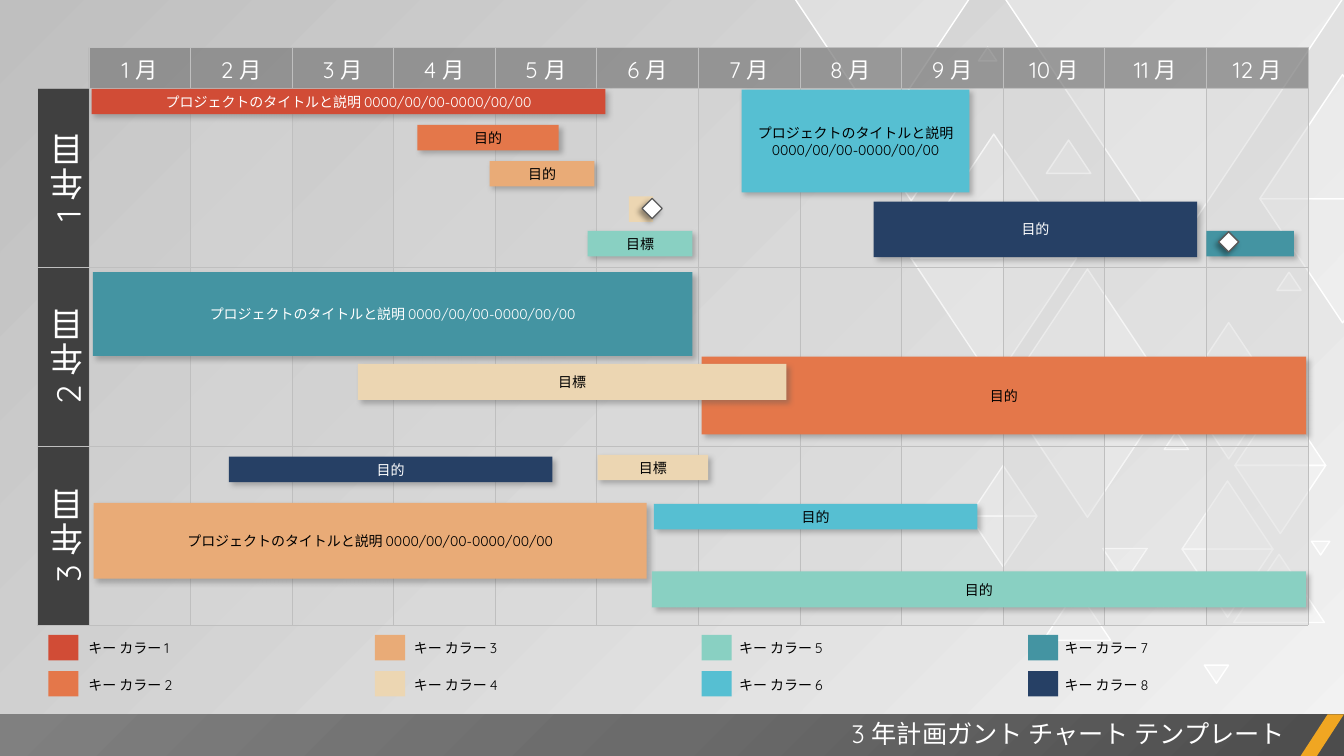
"""Build a three-year Gantt chart slide."""
import dataclasses
import typing

import lxml.etree
import pptx
import pptx.dml.color
import pptx.enum.shapes
import pptx.enum.text
import pptx.oxml
import pptx.oxml.ns
import pptx.shapes.autoshape
import pptx.util

Cm = pptx.util.Cm
Pt = pptx.util.Pt
RGB = pptx.dml.color.RGBColor
Form = pptx.enum.shapes.MSO_SHAPE
Align = pptx.enum.text.PP_ALIGN
Anchor = pptx.enum.text.MSO_ANCHOR
Fit = pptx.enum.text.MSO_AUTO_SIZE
qn = pptx.oxml.ns.qn

WHITE = RGB(0xFF, 0xFF, 0xFF)
BLACK = RGB(0, 0, 0)
SLATE = RGB(0x59, 0x59, 0x59)
DARK = RGB(0x40, 0x40, 0x40)
GRAY = RGB(0x80, 0x80, 0x80)
SILVER = RGB(0xBF, 0xBF, 0xBF)
RULE = RGB(0xA6, 0xA6, 0xA6)
PALE = RGB(0xD9, 0xD9, 0xD9)
MIST = RGB(0xF2, 0xF2, 0xF2)
GOLD = RGB(0xF0, 0xA6, 0x22)
RED = RGB(0xD1, 0x4C, 0x36)
ORANGE = RGB(0xE4, 0x77, 0x4A)
PEACH = RGB(0xE9, 0xAB, 0x77)
SAND = RGB(0xEC, 0xD6, 0xB2)
MINT = RGB(0x89, 0xD0, 0xC2)
SKY = RGB(0x56, 0xBF, 0xD2)
TEAL = RGB(0x44, 0x94, 0xA2)
NAVY = RGB(0x26, 0x40, 0x65)
KEYS = [RED, ORANGE, PEACH, SAND, MINT, SKY, TEAL, NAVY]

FONT = "Quicksand"
PLAN = "プロジェクトのタイトルと説明 0000/00/00-0000/00/00"
AIM = "目的"
GOAL = "目標"
GRAD = (
    '<a:gradFill xmlns:a="http://schemas.openxmlformats.org/drawingml/2006/main"><a:gsLst>'
    '<a:gs pos="0"><a:srgbClr val="4C4C4C"/></a:gs>'
    '<a:gs pos="50000"><a:srgbClr val="6B6B6B"/></a:gs>'
    '<a:gs pos="100000"><a:srgbClr val="808080"/></a:gs></a:gsLst>'
    '<a:path path="circle"><a:fillToRect l="100000" t="100000"/></a:path></a:gradFill>'
)


@dataclasses.dataclass
class Bar:
    """A task bar, in centimetres."""
    left: float
    top: float
    width: float
    color: RGB
    text: str = ""
    height: float = 0.64
    ink: RGB = BLACK
    shade: bool = True


@dataclasses.dataclass
class Peak:
    """A backdrop triangle pointing up, down or both ways."""
    left: float
    top: float
    width: float
    turns: tuple[int, ...] = (0, 180)


UP, DOWN = (0,), (180,)
PEAKS = [
    Peak(22.96, 3.38, 4.17), Peak(25.32, 6.78, 4.17), Peak(25.32, -0.05, 8.53, DOWN),
    Peak(31.09, 13.97, 2.29, UP), Peak(29.79, 12.12, 2.29), Peak(29.82, 8.13, 2.29),
    Peak(31.12, 10.01, 2.29), Peak(26.29, 14.86, 1.7, UP), Peak(24.43, 11.73, 1.7),
    Peak(31.75, 1.88, 4.17), Peak(27.79, 13.82, 1.12, DOWN), Peak(29.34, 10.87, 0.61, UP),
    Peak(30.35, 16.76, 0.61, DOWN), Peak(22.66, 4.6, 0.61, DOWN), Peak(32.18, 6.86, 0.61, UP),
    Peak(24.66, 1.19, 0.46, UP), Peak(33.05, 13.64, 0.46, DOWN), Peak(26.37, 3.53, 1.12, UP),
    Peak(20.02, -0.05, 4.42, DOWN),
]
BARS = [
    Bar(2.31, 2.24, 12.95, RED, PLAN, ink=WHITE),
    Bar(10.52, 3.15, 3.56, ORANGE, AIM),
    Bar(12.34, 4.06, 2.64, PEACH, AIM),
    Bar(15.85, 4.95, 0.61, SAND, shade=False),
    Bar(14.81, 5.82, 2.64, MINT, GOAL),
    Bar(18.69, 2.26, 5.74, SKY, PLAN, 2.59),
    Bar(2.34, 6.86, 15.11, TEAL, PLAN, 2.11, WHITE),
    Bar(22.02, 5.08, 8.15, NAVY, AIM, 1.4, WHITE),
    Bar(17.68, 8.99, 15.24, ORANGE, AIM, 1.96),
    Bar(2.36, 12.67, 13.94, PEACH, PLAN, 1.91),
    Bar(15.06, 11.46, 2.79, SAND, GOAL),
    Bar(16.43, 14.4, 16.48, MINT, AIM, 0.91),
    Bar(16.48, 12.7, 8.15, SKY, AIM),
    Bar(30.4, 5.82, 2.21, TEAL),
    Bar(9.02, 9.17, 10.8, SAND, GOAL, 0.91),
    Bar(5.77, 11.51, 8.15, NAVY, AIM, ink=WHITE),
]


def dress(item: typing.Any, vals: dict[str, typing.Any]) -> None:
    """Set each named value on the item."""
    for name, val in vals.items():
        setattr(item, name, val)


def write(frame: typing.Any, text: str, size: int, ink: RGB, align: Align) -> None:
    """Fill a text frame with one styled line."""
    line = frame.paragraphs[0]
    line.alignment = align
    run = line.add_run()
    dress(run, {"text": text})
    dress(run.font, {"name": FONT, "size": Pt(size), "bold": False})
    run.font.color.rgb = ink


def fade(node: typing.Any, rate: int) -> None:
    """Make the fill of a node partly clear."""
    tint = node.find(f"{qn('a:solidFill')}/{qn('a:srgbClr')}")
    lxml.etree.SubElement(tint, qn("a:alpha"), val=str(rate * 1000))


def draw(shapes: typing.Any, form: Form, box: tuple[float, ...], color: RGB,
         edge: RGB | None = None) -> pptx.shapes.autoshape.Shape:
    """Add a flat filled shape."""
    shape = shapes.add_shape(form, *map(Cm, box))
    shape.shadow.inherit = False
    shape.fill.solid()
    shape.fill.fore_color.rgb = color
    if edge is None:
        shape.line.fill.background()
    else:
        shape.line.color.rgb = edge
        shape.line.width = Pt(1)
    return shape


def shade(shape: pptx.shapes.autoshape.Shape, color: RGB, turn: int) -> None:
    """Cast a soft shadow."""
    list_ = shape.element.spPr.find(qn("a:effectLst"))
    cast = lxml.etree.SubElement(list_, qn("a:outerShdw"), blurRad=str(Pt(4)), dist=str(Pt(3)),
                                 dir=str(turn * 60000), rotWithShape="0")
    tint = lxml.etree.SubElement(cast, qn("a:srgbClr"), val=str(color))
    lxml.etree.SubElement(tint, qn("a:alpha"), val="40000")


def rule(cell: typing.Any, sides: dict[str, RGB | None]) -> None:
    """Draw the borders of a cell."""
    props = cell._tc.get_or_add_tcPr()
    for spot, (side, color) in enumerate(sides.items()):
        edge = lxml.etree.Element(qn(f"a:ln{side}"), w=str(Pt(0.5)))
        fill = lxml.etree.SubElement(edge, qn("a:noFill" if color is None else "a:solidFill"))
        if color is not None:
            lxml.etree.SubElement(fill, qn("a:srgbClr"), val=str(color))
        props.insert(spot, edge)


def paint(cell: typing.Any, row: int, col: int) -> None:
    """Fill, label and border one cell of the grid."""
    sides = dict.fromkeys("LRTB", SILVER)
    if row == col == 0:
        cell.fill.background()
        rule(cell, {"L": None, "R": SILVER, "T": None, "B": RULE})
        return
    cell.fill.solid()
    cell.vertical_anchor = Anchor.MIDDLE
    props = cell._tc.get_or_add_tcPr()
    if row == 0:
        cell.fill.fore_color.rgb = GRAY
        fade(props, 75)
        write(cell.text_frame, f"{col} 月", 16, WHITE, Align.CENTER)
    elif col == 0:
        cell.fill.fore_color.rgb = DARK
        props.set("vert", "vert270")
        write(cell.text_frame, f"{row} 年目", 24, WHITE, Align.CENTER)
        if row == 1:
            sides["T"] = RULE
    else:
        cell.fill.fore_color.rgb = PALE
        fade(props, 25 if col % 2 else 50)
    rule(cell, sides)


def grid(shapes: typing.Any) -> None:
    """Add the table of months and years."""
    table = shapes.add_table(4, 13, Cm(0.93), Cm(1.2), Cm(32.03), Cm(14.45)).table
    dress(table, {"first_row": False, "horz_banding": False})
    for col, part in enumerate(table.columns):
        part.width = Cm(2.56 if col else 1.31)
    for row, part in enumerate(table.rows):
        part.height = Cm(4.51 if row else 0.92)
        for col, cell in enumerate(part.cells):
            paint(cell, row, col)


def main() -> None:
    """Build and save the slide."""
    deck = pptx.Presentation()
    dress(deck, {"slide_width": Cm(33.87), "slide_height": Cm(19.05)})
    slide = deck.slides.add_slide(deck.slide_layouts[5])
    shapes = slide.shapes
    back = slide.background.fill
    back.gradient()
    back.gradient_angle = 135
    for stop, color in zip(back.gradient_stops, (MIST, SILVER)):
        stop.color.rgb = color

    group = shapes.add_group_shape()
    for peak in PEAKS:
        high = peak.width * 0.75
        for step, turn in enumerate(peak.turns):
            box = (peak.left, peak.top + step * high, peak.width, high)
            shape = draw(group.shapes, Form.ISOSCELES_TRIANGLE, box, WHITE, WHITE)
            shape.rotation = turn
            fade(shape.element.spPr, 30)

    props = draw(shapes, Form.RECTANGLE, (0, 18, 33.87, 1.06), GRAY).element.spPr
    props.replace(props.find(qn("a:solidFill")), pptx.oxml.parse_xml(GRAD))
    draw(shapes, Form.PARALLELOGRAM, (32.77, 18, 1.1, 1.06), GOLD).adjustments[0] = 0.65

    title = shapes.title
    shapes.element.append(title.element)
    dress(title, {"left": Cm(13.34), "top": Cm(17.98), "width": Cm(19.3), "height": Cm(1.02)})
    fit = {"word_wrap": True, "auto_size": Fit.SHAPE_TO_FIT_TEXT, "vertical_anchor": Anchor.TOP}
    dress(title.text_frame, fit)
    write(title.text_frame, "3 年計画ガント チャート テンプレート", 18, WHITE, Align.RIGHT)

    grid(shapes)
    for bar in BARS:
        shape = draw(shapes, Form.RECTANGLE, (bar.left, bar.top, bar.width, bar.height), bar.color)
        if bar.shade:
            shade(shape, SLATE, 45)
        if bar.text:
            dress(shape.text_frame, {"word_wrap": True, "vertical_anchor": Anchor.MIDDLE})
            write(shape.text_frame, bar.text, 10, bar.ink, Align.CENTER)
    for left, top in ((16.18, 5), (30.71, 5.84)):
        shade(draw(shapes, Form.DIAMOND, (left, top, 0.51, 0.51), WHITE, SLATE), BLACK, 135)

    for spot, color in enumerate(KEYS):
        col, row = divmod(spot, 2)
        top = 16 + row * 0.91
        draw(shapes, Form.RECTANGLE, (1.22 + col * 8.23, top, 0.76, 0.64), color)
        label = shapes.add_textbox(Cm(1.98 + col * 8.2), Cm(top), Cm(6.1), Cm(0.69))
        dress(label.text_frame, fit)
        write(label.text_frame, f"キー カラー {spot + 1}", 10, BLACK, Align.LEFT)
    deck.save("out.pptx")


if __name__ == "__main__":
    main()
